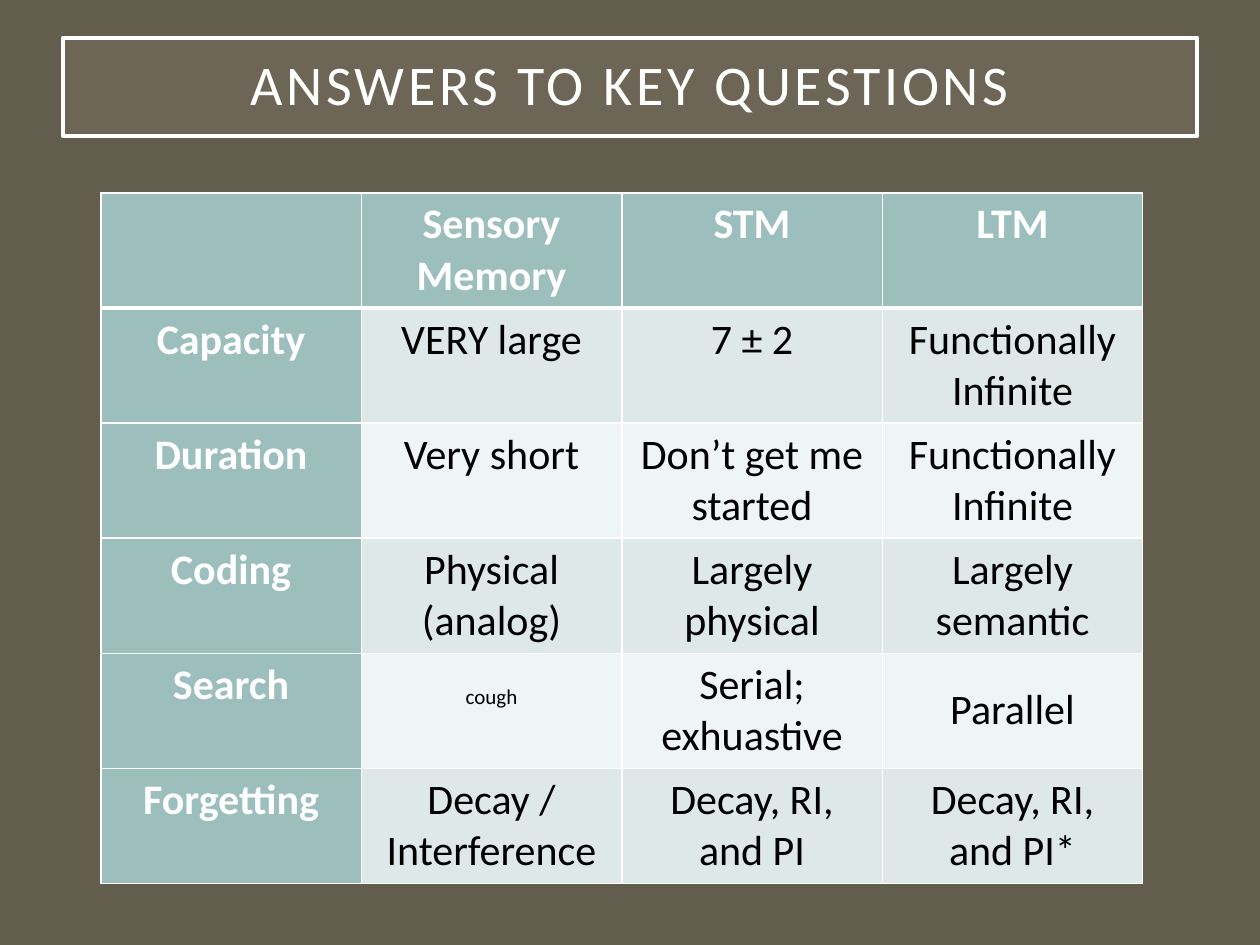
from dataclasses import dataclass

from lxml import etree
from pptx import Presentation
from pptx import util as u
from pptx.dml.color import RGBColor
from pptx.enum import text
from pptx.oxml import ns


@dataclass(frozen=True)
class Theme:
    font: str = "Calibri"
    background: str = "635D4D"
    panel: str = "A7A08E"
    panel_opacity: int = 15
    light: str = "FFFFFF"
    dark: str = "000000"
    heading: str = "9CBEBD"
    bands: tuple = ("DEE8E8", "EFF4F4")
    title_size: int = 32
    cell_size: int = 24
    aside_size: int = 12
    title_spacing: int = 2
    rule: float = 1
    header_rule: float = 3
    frame: float = 2.5


THEME = Theme()
WIDTH, HEIGHT = u.Inches(10), u.Inches(7.5)
LOWERED = u.Inches(0.25)  # top margin of cells set one small line down

TITLE = "ANSWERS TO KEY QUESTIONS"
ANSWERS = [
    ["", "Sensory Memory", "STM", "LTM"],
    ["Capacity", "VERY large", "7 ± 2", "Functionally Infinite"],
    ["Duration", "Very short", "Don’t get me started", "Functionally Infinite"],
    ["Coding", "Physical (analog)", "Largely physical", "Largely semantic"],
    ["Search", "cough", "Serial; exhuastive", "Parallel"],
    ["Forgetting", "Decay / Interference", "Decay, RI, and PI", "Decay, RI, and PI*"],
]
ASIDES = {"cough"}
LOWERED_TEXTS = {"cough", "Parallel"}


def share(left, top, width, height):
    """Turn shares of the slide's size into lengths."""
    return (int(WIDTH * left), int(HEIGHT * top),
            int(WIDTH * width), int(HEIGHT * height))


def paint(fill, color):
    fill.solid()
    fill.fore_color.rgb = RGBColor.from_string(color)


def add_span(para, words, size, color, bold=False):
    para.alignment = text.PP_ALIGN.CENTER
    span = para.add_run()
    span.text = words
    span.font.name = THEME.font
    span.font.size = u.Pt(size)
    span.font.bold = bold
    span.font.color.rgb = RGBColor.from_string(color)
    return span


def set_opacity(shape, percent):
    color = shape.fill._xPr.find(ns.qn("a:solidFill"))[0]
    etree.SubElement(color, ns.qn("a:alpha"), val=str(percent * 1000))


def set_border(cell, side, points):
    """Draw one side of a cell: L, R, T or B."""
    properties = cell._tc.get_or_add_tcPr()
    line = etree.SubElement(properties, ns.qn(f"a:ln{side}"), w=str(u.Pt(points)))
    fill = etree.SubElement(line, ns.qn("a:solidFill"))
    etree.SubElement(fill, ns.qn("a:srgbClr"), val=THEME.light)


def format_title(page):
    box = page.shapes.title
    box.left, box.top, box.width, box.height = share(0.05, 0.04, 0.9, 0.104)
    paint(box.fill, THEME.panel)
    set_opacity(box, THEME.panel_opacity)
    paint(box.line.fill, THEME.light)
    box.line.width = u.Pt(THEME.frame)

    frame = box.text_frame
    frame.word_wrap = True
    frame.auto_size = text.MSO_AUTO_SIZE.NONE
    frame.vertical_anchor = text.MSO_ANCHOR.MIDDLE
    for side in ("left", "top", "right", "bottom"):
        setattr(frame, f"margin_{side}", u.Inches(0.2))
    para = frame.paragraphs[0]
    para.line_spacing = 0.9
    span = add_span(para, TITLE, THEME.title_size, THEME.light)
    span.font._element.set("spc", str(THEME.title_spacing * 100))


def format_cell(cell, words, row, column):
    is_heading = row == 0 or column == 0

    # Borders go before the fill in the cell's properties
    heavy_side = {0: "B", 1: "T"}.get(row)
    for side in "LRTB":
        set_border(cell, side, THEME.header_rule if side == heavy_side else THEME.rule)
    band = THEME.bands[(row - 1) % len(THEME.bands)]
    paint(cell.fill, THEME.heading if is_heading else band)

    if words in LOWERED_TEXTS:
        cell.margin_top = LOWERED
    if words:
        size = THEME.aside_size if words in ASIDES else THEME.cell_size
        color = THEME.light if is_heading else THEME.dark
        add_span(cell.text_frame.paragraphs[0], words, size, color, is_heading)


def add_answers(page):
    table = page.shapes.add_table(
        len(ANSWERS), len(ANSWERS[0]), *share(0.08, 0.204, 0.827, 0.73)).table
    for row, answers in enumerate(ANSWERS):
        for column, words in enumerate(answers):
            format_cell(table.cell(row, column), words, row, column)


def main():
    deck = Presentation()
    deck.slide_width, deck.slide_height = WIDTH, HEIGHT
    page = deck.slides.add_slide(deck.slide_layouts.get_by_name("Title Only"))
    paint(page.background.fill, THEME.background)
    format_title(page)
    add_answers(page)
    deck.save("out.pptx")


if __name__ == "__main__":
    main()
